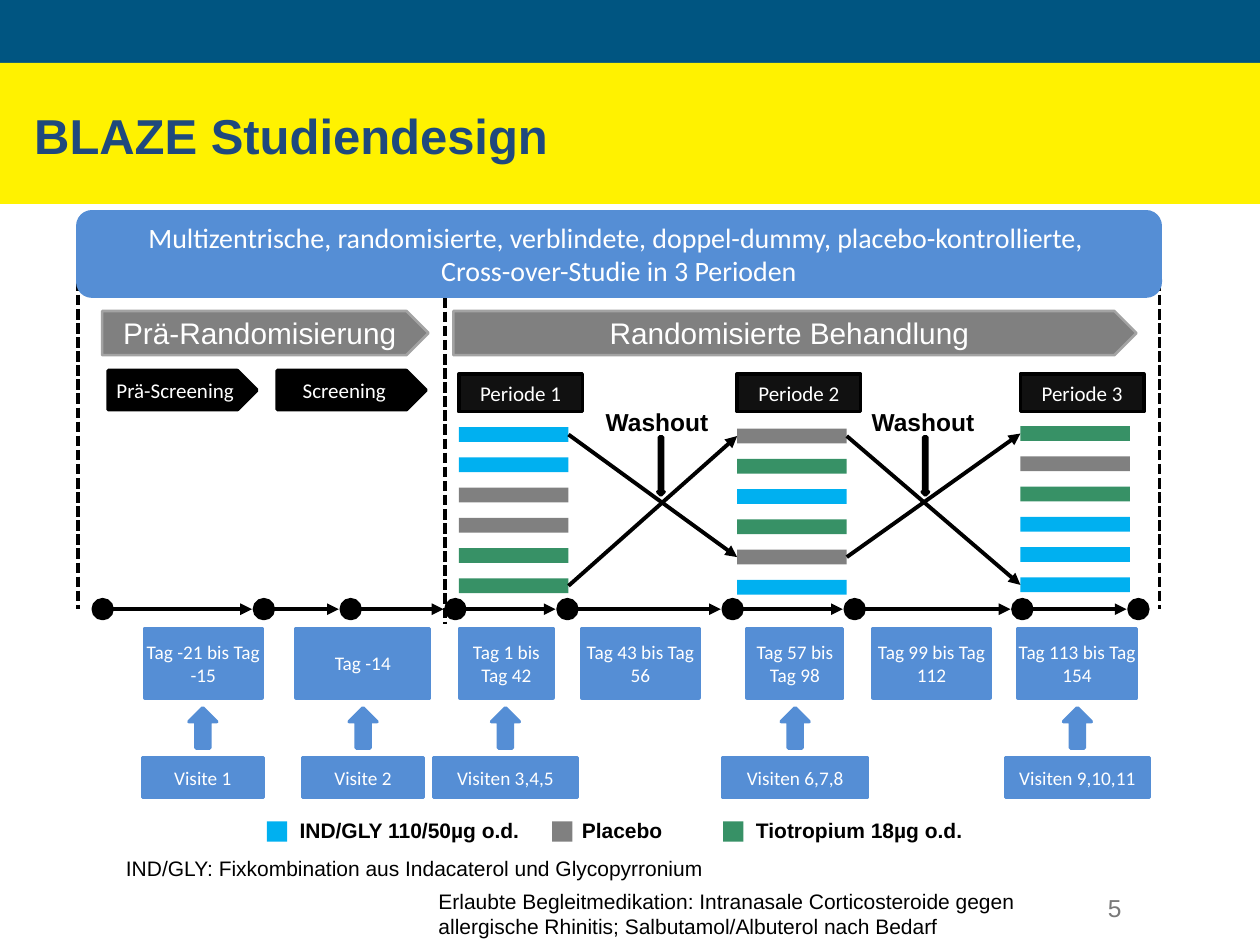
from itertools import pairwise

from lxml.etree import SubElement
from pptx import Presentation
from pptx.dml.color import RGBColor
from pptx.enum.dml import MSO_LINE_DASH_STYLE as Dash
from pptx.enum.shapes import MSO_CONNECTOR, MSO_SHAPE
from pptx.enum.text import MSO_ANCHOR, PP_ALIGN
from pptx.oxml.ns import qn
from pptx.util import Cm, Pt

BLACK = RGBColor(0x00, 0x00, 0x00)
WHITE = RGBColor(0xFF, 0xFF, 0xFF)
NAVY = RGBColor(0x00, 0x55, 0x81)
YELLOW = RGBColor(0xFF, 0xF2, 0x00)
TITLE_BLUE = RGBColor(0x1F, 0x49, 0x7D)
BOX_BLUE = RGBColor(0x55, 0x8E, 0xD5)
PERIOD_BLACK = RGBColor(0x11, 0x11, 0x11)
PHASE_EDGE = RGBColor(0xA3, 0xA3, 0xA3)
NUMBER_GRAY = RGBColor(0x79, 0x79, 0x79)
IND_GLY = RGBColor(0x00, 0xB0, 0xF0)
PLACEBO = RGBColor(0x80, 0x80, 0x80)
TIOTROPIUM = RGBColor(0x37, 0x91, 0x66)

# label, left, top of first bar, treatment of each of the six sequences
PERIODS = [
    ("Periode 1", 9.25, 8.61, [IND_GLY, IND_GLY, PLACEBO, PLACEBO, TIOTROPIUM, TIOTROPIUM]),
    ("Periode 2", 14.86, 8.64, [PLACEBO, TIOTROPIUM, IND_GLY, TIOTROPIUM, PLACEBO, IND_GLY]),
    ("Periode 3", 20.57, 8.59, [TIOTROPIUM, PLACEBO, TIOTROPIUM, IND_GLY, IND_GLY, IND_GLY]),
]
BAR_WIDTH, BAR_HEIGHT, BAR_PITCH = 2.21, 0.3, 0.61
# period, bar, bar reached in the next period
CROSSOVERS = [(0, 0, 4), (0, 5, 0), (1, 0, 5), (1, 4, 0)]

DASHED_LINES = [(1.57, 5.66, 12.27), (8.97, 6, 12.57), (23.37, 5.66, 12.27)]
DOT_LEFTS = [1.88, 5.13, 6.88, 8.99, 11.25, 14.58, 17.04, 20.42, 22.76]
DOT_TOP, DOT_SIZE = 12.09, 0.38
DAYS = [
    ("Tag -21 bis Tag -15", 2.92, 2.36),
    ("Tag -14", 5.97, 2.69),
    ("Tag 1 bis Tag 42", 9.27, 1.88),
    ("Tag 43 bis Tag 56", 11.73, 2.36),
    ("Tag 57 bis Tag 98", 15.06, 1.93),
    ("Tag 99 bis Tag 112", 17.6, 2.36),
    ("Tag 113 bis Tag 154", 20.52, 2.39),
]
VISITS = [
    ("Visite 1", 2.87, 2.44),
    ("Visite 2", 6.1, 2.44),
    ("Visiten 3,4,5", 8.74, 2.9),
    ("Visiten 6,7,8", 14.58, 2.9),
    ("Visiten 9,10,11", 20.27, 2.9),
]
ARROW_WIDTH = 0.56
# text, square left, text left, text width, colour
LEGEND = [
    ("IND/GLY 110/50µg o.d.", 5.38, 5.79, 5, IND_GLY),
    ("Placebo", 11.13, 11.48, 2.18, PLACEBO),
    ("Tiotropium 18µg o.d.", 14.58, 14.99, 5.72, TIOTROPIUM),
]


def set_margins(frame, side, top_bottom):
    frame.margin_left = frame.margin_right = Cm(side)
    frame.margin_top = frame.margin_bottom = Cm(top_bottom)


def write(frame, text, size, color, name, bold=False, align=PP_ALIGN.LEFT):
    frame.text = text
    for paragraph in frame.paragraphs:
        paragraph.alignment = align
        font = paragraph.font
        font.name, font.size, font.bold = name, Pt(size), bold
        font.color.rgb = color


def add_block(slide, kind, left, top, width, height, fill, line=None, line_width=2):
    shape = slide.shapes.add_shape(kind, Cm(left), Cm(top), Cm(width), Cm(height))
    shape.shadow.inherit = False
    shape.fill.solid()
    shape.fill.fore_color.rgb = fill
    if line is None:
        shape.line.fill.background()
    else:
        shape.line.color.rgb = line
        shape.line.width = Pt(line_width)
    return shape


def add_box(slide, text, left, top, width, height, size, fill=BOX_BLUE, line=BOX_BLUE,
            kind=MSO_SHAPE.RECTANGLE):
    box = add_block(slide, kind, left, top, width, height, fill, line)
    frame = box.text_frame
    frame.word_wrap = True
    frame.vertical_anchor = MSO_ANCHOR.MIDDLE
    set_margins(frame, 0, 0)
    write(frame, text, size, WHITE, "Calibri", align=PP_ALIGN.CENTER)


def add_pentagon(slide, text, left, top, width, height, size, name, fill, line, line_width):
    pentagon = add_block(slide, MSO_SHAPE.PENTAGON, left, top, width, height, fill, line, line_width)
    pentagon.adjustments[0] = 0.5
    frame = pentagon.text_frame
    frame.word_wrap = False
    frame.vertical_anchor = MSO_ANCHOR.MIDDLE
    set_margins(frame, 0.2, 0)
    write(frame, text, size, WHITE, name, align=PP_ALIGN.CENTER)


def add_text(slide, text, left, top, width, height, size, color=BLACK, bold=False,
             align=PP_ALIGN.LEFT, wrap=True):
    box = slide.shapes.add_textbox(Cm(left), Cm(top), Cm(width), Cm(height))
    frame = box.text_frame
    frame.word_wrap = wrap
    write(frame, text, size, color, "Arial", bold, align)
    return frame


def add_line(slide, x1, y1, x2, y2, width=2.25, dashed=False):
    """Draw a dashed line, or a solid one with an arrowhead at its end."""
    line = slide.shapes.add_connector(MSO_CONNECTOR.STRAIGHT, Cm(x1), Cm(y1), Cm(x2), Cm(y2))
    line.line.color.rgb = BLACK
    line.line.width = Pt(width)
    if dashed:
        line.line.dash_style = Dash.SQUARE_DOT
    else:
        SubElement(line.line._get_or_add_ln(), qn("a:tailEnd"), type="triangle")
    SubElement(line._element.spPr, qn("a:effectLst"))
    return line


def add_header(slide):
    add_block(slide, MSO_SHAPE.RECTANGLE, 0, 0, 25.4, 1.27, NAVY)
    add_block(slide, MSO_SHAPE.RECTANGLE, 0, 1.27, 25.4, 2.84, YELLOW)
    title = add_text(slide, "BLAZE Studiendesign", 0.69, 1.52, 12.55, 2.41, 28, TITLE_BLUE, True)
    title.vertical_anchor = MSO_ANCHOR.MIDDLE
    set_margins(title, 0, 0)


def add_phases(slide):
    for x, top, bottom in DASHED_LINES:
        add_line(slide, x, top, x, bottom, 2, dashed=True)
    add_box(slide, "Multizentrische, randomisierte, verblindete, doppel-dummy, "
            "placebo-kontrollierte, \vCross-over-Studie in 3 Perioden",
            1.57, 4.27, 21.82, 1.7, 16, kind=MSO_SHAPE.ROUNDED_RECTANGLE)
    for text, left, width in [("Prä-Randomisierung", 2.06, 6.58),
                              ("Randomisierte Behandlung", 9.14, 13.77)]:
        add_pentagon(slide, text, left, 6.27, width, 0.89, 17, "Arial", PLACEBO, PHASE_EDGE, 1.5)
    for text, left in [("Prä-Screening ", 2.18), ("Screening ", 5.59)]:
        add_pentagon(slide, text, left, 7.47, 3, 0.79, 12, "Calibri", BLACK, BLACK, 2)


def add_periods(slide):
    bars = []
    for label, left, top, treatments in PERIODS:
        add_box(slide, label, left, 7.54, 2.49, 0.76, 12, PERIOD_BLACK, BLACK)
        bars.append([
            add_block(slide, MSO_SHAPE.RECTANGLE, left, top + row * BAR_PITCH,
                      BAR_WIDTH, BAR_HEIGHT, color)
            for row, color in enumerate(treatments)
        ])
    for period, start, end in CROSSOVERS:
        arrow = add_line(slide, 0, 0, 1, 1)
        arrow.begin_connect(bars[period][start], 3)
        arrow.end_connect(bars[period + 1][end], 1)
    for text_left, arrow_left in [(11.96, 13.26), (17.32, 18.59)]:
        add_text(slide, "Washout", text_left, 8.08, 2.74, 0.86, 14, bold=True)
        add_block(slide, MSO_SHAPE.DOWN_ARROW, arrow_left, 8.81, 0.13, 1.17, BLACK, BLACK)


def add_timeline(slide):
    for left in DOT_LEFTS:
        add_block(slide, MSO_SHAPE.OVAL, left, DOT_TOP, DOT_SIZE, DOT_SIZE, BLACK, BLACK)
    middle = DOT_TOP + DOT_SIZE / 2
    for left, next_left in pairwise(DOT_LEFTS):
        add_line(slide, left + DOT_SIZE, middle, next_left - 0.05, middle)
    for text, left, width in DAYS:
        add_box(slide, text, left, 12.67, width, 1.4, 11)
    for text, left, width in VISITS:
        add_box(slide, text, left, 15.27, width, 0.81, 11)
        add_block(slide, MSO_SHAPE.UP_ARROW, left + (width - ARROW_WIDTH) / 2, 14.27,
                  ARROW_WIDTH, 0.81, BOX_BLUE, BOX_BLUE)


def add_legend_and_notes(slide):
    for text, square_left, text_left, width, color in LEGEND:
        add_block(slide, MSO_SHAPE.RECTANGLE, square_left, 16.56, 0.41, 0.41, color)
        add_text(slide, text, text_left, 16.36, width, 0.76, 12, bold=True)
    add_text(slide, "IND/GLY: Fixkombination aus Indacaterol und Glycopyrronium",
             2.29, 17.12, 12.24, 0.76, 12, wrap=False)
    add_text(slide, "Erlaubte Begleitmedikation: Intranasale Corticosteroide gegen "
             "allergische Rhinitis; Salbutamol/Albuterol nach Bedarf", 8.59, 17.78, 12.9, 1.27, 12)
    add_text(slide, "5", 16.94, 17.88, 5.92, 1.02, 14, NUMBER_GRAY, align=PP_ALIGN.RIGHT)


def main():
    presentation = Presentation()
    presentation.slide_width, presentation.slide_height = Cm(25.4), Cm(19.05)
    slide = presentation.slides.add_slide(presentation.slide_layouts[6])
    add_header(slide)
    add_phases(slide)
    add_periods(slide)
    add_timeline(slide)
    add_legend_and_notes(slide)
    presentation.save("out.pptx")


if __name__ == "__main__":
    main()
